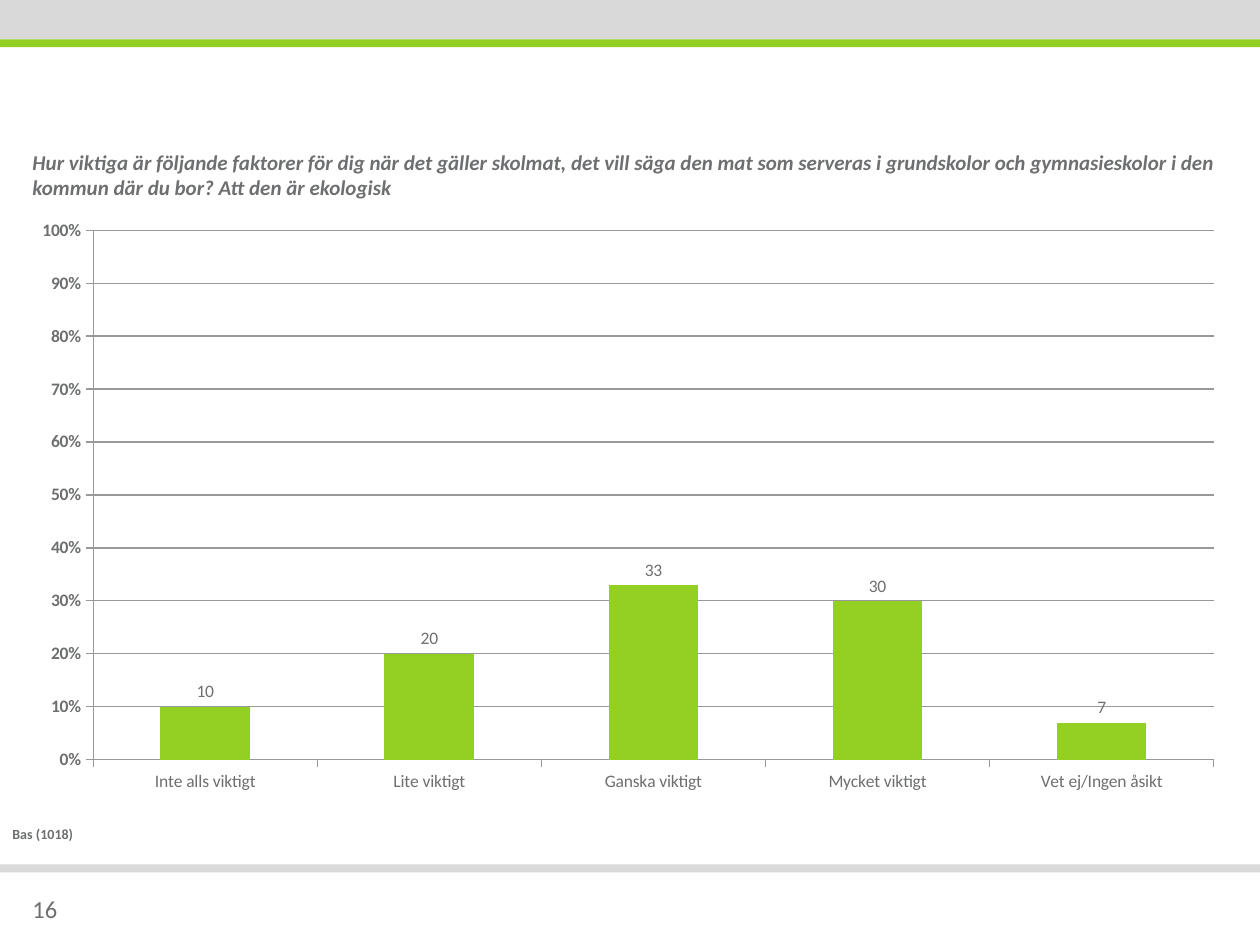
from lxml import etree
from pptx import Presentation
from pptx.chart.data import CategoryChartData
from pptx.dml.color import RGBColor
from pptx.enum.chart import XL_CHART_TYPE, XL_LABEL_POSITION, XL_TICK_MARK
from pptx.enum.shapes import MSO_SHAPE
from pptx.enum.text import MSO_ANCHOR
from pptx.oxml.ns import qn
from pptx.util import Pt

COLUMN = XL_CHART_TYPE.COLUMN_CLUSTERED
OUTSIDE_END = XL_LABEL_POSITION.OUTSIDE_END
TICK_OUT = XL_TICK_MARK.OUTSIDE
RECT = MSO_SHAPE.RECTANGLE
TOP, MIDDLE = MSO_ANCHOR.TOP, MSO_ANCHOR.MIDDLE

THEME = {
    "font": "Calibri",
    "text": RGBColor.from_string("6D6F71"),
    "green": RGBColor.from_string("93D023"),
    "grey": RGBColor.from_string("D9D9D9"),
    "axis": RGBColor.from_string("999999"),
    "page": 14,
    "question": 12,
    "chart": 10,
    "base": 8,
}

WIDTH, HEIGHT = 720, 540
BANDS = [(0, 22.5, "grey"), (494, 4.5, "grey"), (22.5, 4.5, "green")]
TEXTS = [
    ("16", (11.5, 500.5, 55.5, 37.5), "page", MIDDLE, {}),
    ("Hur viktiga är följande faktorer för dig när det gäller skolmat, det vill säga "
     "den mat som serveras i grundskolor och gymnasieskolor i den kommun där du bor? "
     "Att den är ekologisk",
     (11.5, 82, 698, 41), "question", TOP, {"bold": True, "italic": True}),
    ("Bas (1018)", (0, 468, WIDTH, 17), "base", TOP, {"bold": True}),
]
ANSWERS = [
    ("Inte alls viktigt", 10),
    ("Lite viktigt", 20),
    ("Ganska viktigt", 33),
    ("Mycket viktigt", 30),
    ("Vet ej/Ingen åsikt", 7),
]
CHART_BOX = (11.5, 118, 696, 340)
PLOT = {"x": 0.06, "y": 0.04, "w": 0.92, "h": 0.89}


def set_attrs(target, values):
    for name, value in values.items():
        setattr(target, name, value)


def style_font(font, size, **extra):
    set_attrs(font, {"name": THEME["font"], "size": Pt(THEME[size]), **extra})
    font.color.rgb = THEME["text"]


def style_line(line):
    line.color.rgb = THEME["axis"]
    line.width = Pt(0.75)


def add_band(s, top, height, color):
    sp = s.shapes.add_shape(RECT, 0, Pt(top), Pt(WIDTH), Pt(height))
    sp.shadow.inherit = False
    sp.fill.solid()
    sp.fill.fore_color.rgb = THEME[color]
    sp.line.fill.background()


def add_text(s, text, box, size, anchor, extra):
    tf = s.shapes.add_textbox(*map(Pt, box)).text_frame
    set_attrs(tf, {"word_wrap": True, "vertical_anchor": anchor})
    r = tf.paragraphs[0].add_run()
    r.text = text
    style_font(r.font, size, **extra)


def place_plot(chart):
    area = chart.element.find(".//" + qn("c:plotArea"))
    for old in area.findall(qn("c:layout")):
        area.remove(old)
    layout = etree.Element(qn("c:layout"))
    manual = etree.SubElement(layout, qn("c:manualLayout"))
    settings = {"layoutTarget": "inner", "xMode": "edge", "yMode": "edge", **PLOT}
    for tag, value in settings.items():
        etree.SubElement(manual, qn("c:" + tag)).set("val", str(value))
    area.insert(0, layout)


def add_answer_chart(s):
    data = CategoryChartData()
    data.categories = [answer for answer, _ in ANSWERS]
    data.add_series("Series 1", [share for _, share in ANSWERS])
    chart = s.shapes.add_chart(COLUMN, *map(Pt, CHART_BOX), data).chart
    set_attrs(chart, {"has_legend": False, "has_title": False})
    style_font(chart.font, "chart")
    place_plot(chart)

    for axis, bold in ((chart.category_axis, False), (chart.value_axis, True)):
        axis.major_tick_mark = TICK_OUT
        style_font(axis.tick_labels.font, "chart", bold=bold)
        style_line(axis.format.line)
    axis = chart.value_axis
    set_attrs(axis, {"minimum_scale": 0, "maximum_scale": 100, "major_unit": 10,
                     "has_major_gridlines": True})
    style_line(axis.major_gridlines.format.line)
    set_attrs(axis.tick_labels,
              {"number_format": '0"%"', "number_format_is_linked": False})

    plot = chart.plots[0]
    set_attrs(plot, {"gap_width": 150, "vary_by_categories": False})
    series = plot.series[0]
    series.format.fill.solid()
    series.format.fill.fore_color.rgb = THEME["green"]
    labels = series.data_labels
    set_attrs(labels, {"show_value": True, "position": OUTSIDE_END,
                       "number_format": "General", "number_format_is_linked": False})
    style_font(labels.font, "chart")


def main():
    prs = Presentation()
    set_attrs(prs, {"slide_width": Pt(WIDTH), "slide_height": Pt(HEIGHT)})
    s = prs.slides.add_slide(prs.slide_layouts[6])
    for band in BANDS:
        add_band(s, *band)
    add_answer_chart(s)
    for text in TEXTS:
        add_text(s, *text)
    prs.save("out.pptx")


if __name__ == "__main__":
    main()
